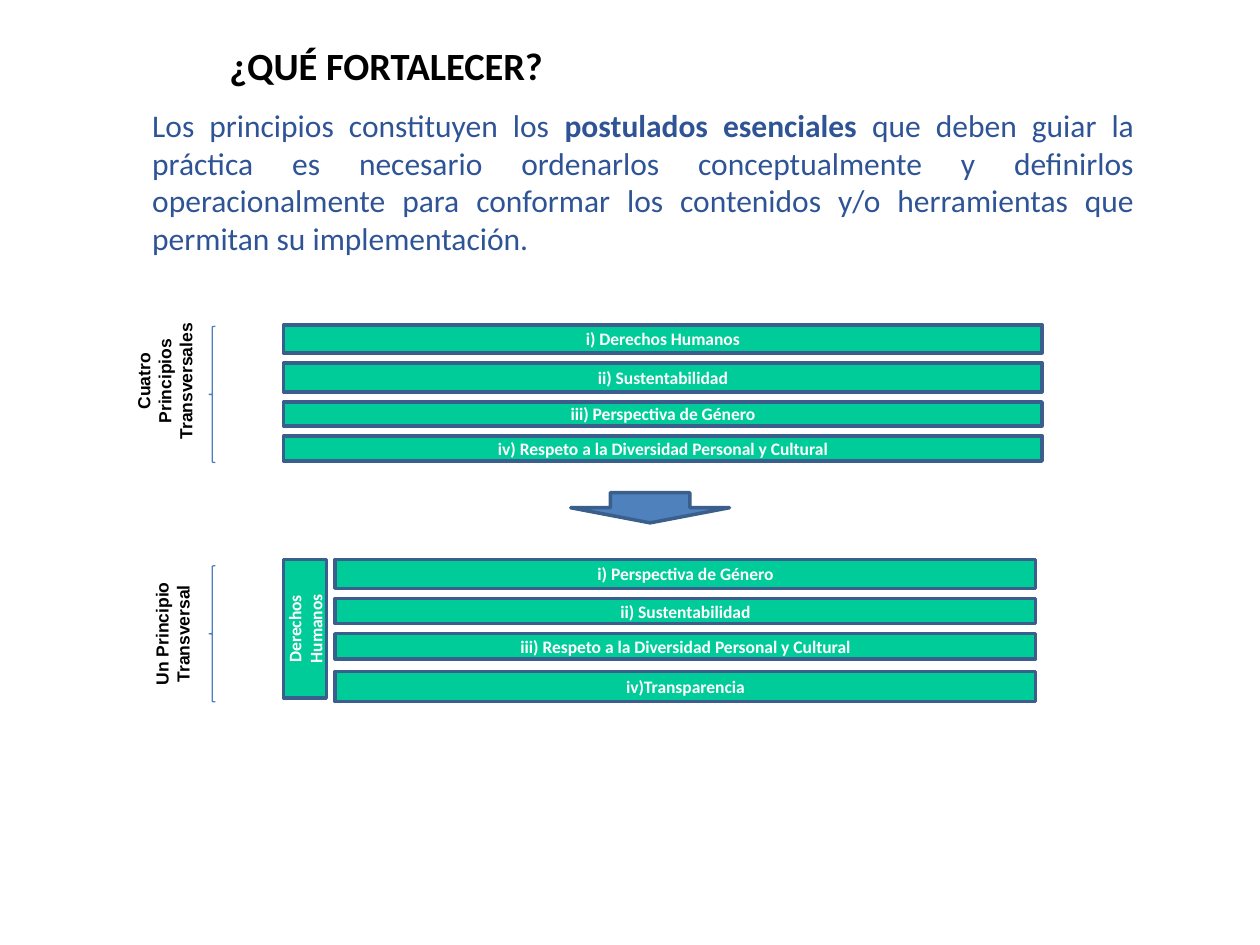
from dataclasses import dataclass

from pptx import Presentation
from pptx.dml.color import RGBColor
from pptx.enum.shapes import MSO_SHAPE as Shape
from pptx.enum.text import MSO_ANCHOR as Anchor, PP_ALIGN as Align
from pptx.util import Inches, Pt


@dataclass(frozen=True)
class Theme:
    heading: str = "Calibri"
    label: str = "Arial"
    black: str = "000000"
    white: str = "FFFFFF"
    body: str = "2F5496"
    bar: str = "00CC99"
    arrow: str = "4F81BD"
    outline: str = "3A5F8C"
    brace: str = "4B7EBC"
    title_size: int = 22
    body_size: int = 18
    small_size: int = 10


T = Theme()

CURRENT = [
    ("i) Derechos Humanos", 2.58, 0.22),
    ("ii) Sustentabilidad", 2.88, 0.23),
    ("iii) Perspectiva de Género", 3.19, 0.19),
    ("iv) Respeto a la Diversidad Personal y Cultural", 3.46, 0.2),
]
PROPOSED = [
    ("i) Perspectiva de Género", 4.44, 0.23),
    ("ii) Sustentabilidad", 4.75, 0.2),
    ("iii) Respeto a la Diversidad Personal y Cultural", 5.03, 0.2),
    ("iv)Transparencia", 5.33, 0.24),
]
INTRO = [
    ("Los principios constituyen los ", False),
    ("postulados esenciales", True),
    (" que deben guiar la práctica es necesario ordenarlos conceptualmente "
     "y definirlos operacionalmente para conformar los contenidos y/o "
     "herramientas que permitan su implementación.", False),
]


def write(sp, paragraphs, font=T.heading, size=T.small_size, color=T.white,
          align=Align.CENTER, anchor=Anchor.MIDDLE):
    tf = sp.text_frame
    tf.word_wrap = True
    tf.vertical_anchor = anchor
    for i, runs in enumerate(paragraphs):
        p = tf.paragraphs[0] if i == 0 else tf.add_paragraph()
        p.alignment = align
        for text, bold in runs:
            r = p.add_run()
            r.text = text
            r.font.name = font
            r.font.size = Pt(size)
            r.font.bold = bold
            r.font.color.rgb = RGBColor.from_string(color)


def add_text(s, box, paragraphs, rotation=0, **style):
    sp = s.shapes.add_textbox(*map(Inches, box))
    sp.rotation = rotation
    write(sp, paragraphs, **style)


def add_figure(s, kind, box, fill=None, line=T.outline, width=2):
    sp = s.shapes.add_shape(kind, *map(Inches, box))
    sp.shadow.inherit = False
    if fill:
        sp.fill.solid()
        sp.fill.fore_color.rgb = RGBColor.from_string(fill)
    else:
        sp.fill.background()
    sp.line.color.rgb = RGBColor.from_string(line)
    sp.line.width = Pt(width)
    return sp


def add_bar(s, text, box, rotation=0):
    sp = add_figure(s, Shape.RECTANGLE, box, T.bar)
    sp.rotation = rotation
    write(sp, [[(text, True)]])


def add_principles(s, bars, left, width, brace_top, label, label_box):
    for text, top, height in bars:
        add_bar(s, text, (left, top, width, height))
    add_figure(s, Shape.LEFT_BRACE, (1.66, brace_top, 0.05, 1.08),
               line=T.brace, width=0.75)
    add_text(s, label_box, [[(line, True)] for line in label], rotation=270,
             font=T.label, color=T.black, anchor=Anchor.TOP)


def main():
    prs = Presentation()
    prs.slide_width, prs.slide_height = Inches(10), Inches(7.5)
    s = prs.slides.add_slide(prs.slide_layouts[6])

    add_text(s, (1.37, 0.15, 3.39, 0.73), [[("¿QUÉ FORTALECER?", True)]],
             size=T.title_size, color=T.black)
    add_text(s, (1.11, 0.79, 7.99, 1.31), [INTRO], size=T.body_size,
             color=T.body, align=Align.JUSTIFY, anchor=Anchor.TOP)
    add_principles(s, CURRENT, 2.25, 6.02, 2.59,
                   ["Cuatro Principios", "Transversales"],
                   (0.68, 2.72, 1.26, 0.61))
    add_figure(s, Shape.DOWN_ARROW, (4.53, 3.91, 1.26, 0.24), T.arrow)
    add_principles(s, PROPOSED, 2.66, 5.56, 4.49,
                   ["Un Principio", "Transversal"],
                   (0.74, 4.81, 1.26, 0.44))
    add_bar(s, "Derechos Humanos", (1.87, 4.82, 1.1, 0.34), rotation=270)

    prs.save("out.pptx")


if __name__ == "__main__":
    main()
